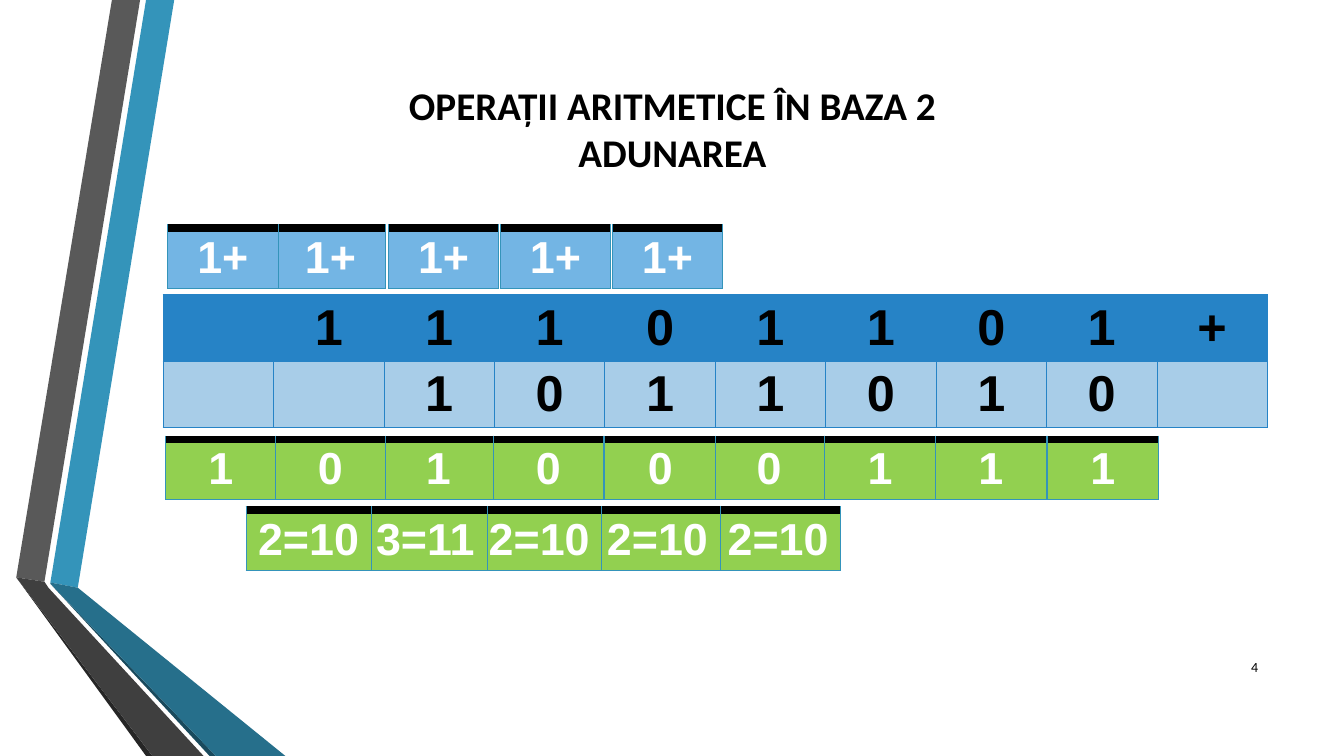
from dataclasses import dataclass

from lxml import etree
from pptx import Presentation
from pptx.dml.color import RGBColor
from pptx.enum.text import MSO_ANCHOR, MSO_AUTO_SIZE, PP_ALIGN
from pptx.oxml.ns import qn
from pptx.slide import Slide
from pptx.table import _Cell
from pptx.text.text import TextFrame
from pptx.util import Cm, Pt

CENTER, RIGHT = PP_ALIGN.CENTER, PP_ALIGN.RIGHT
MIDDLE = MSO_ANCHOR.MIDDLE
NO_AUTOFIT = MSO_AUTO_SIZE.NONE
TITLE_ONLY = 5

BLACK = RGBColor(0x00, 0x00, 0x00)
WHITE = RGBColor(0xFF, 0xFF, 0xFF)
BLUE = RGBColor(0x26, 0x83, 0xC6)
PALE_BLUE = RGBColor(0xA8, 0xCD, 0xE8)
SKY_BLUE = RGBColor(0x73, 0xB5, 0xE4)
GREEN = RGBColor(0x92, 0xD0, 0x50)
TEAL = RGBColor(0x34, 0x94, 0xBA)
DARK_TEAL = RGBColor(0x26, 0x6F, 0x8B)
DEEP_TEAL = RGBColor(0x19, 0x4A, 0x5D)
GRAY = RGBColor(0x59, 0x59, 0x59)
DARK_GRAY = RGBColor(0x3F, 0x3F, 0x3F)
DEEP_GRAY = RGBColor(0x26, 0x26, 0x26)

ROW_HEIGHT = 1.03


@dataclass(frozen=True)
class Ribbon:
    color: RGBColor
    points: list[tuple[float, float]]


@dataclass(frozen=True)
class CellStyle:
    fill: RGBColor
    text: RGBColor
    size: float
    side: RGBColor
    top: RGBColor
    top_width: float


@dataclass(frozen=True)
class Band:
    """A row of single-cell tables; lengths in centimetres."""
    top: float
    width: float
    fill: RGBColor


@dataclass(frozen=True)
class Digit:
    band: Band
    label: str
    left: float


RIBBONS = [
    Ribbon(TEAL, [(1.27, 14.68), (1.96, 14.81), (4.39, 0), (3.68, 0)]),
    Ribbon(GRAY, [(3.53, 0), (2.82, 0), (0.41, 14.55), (1.12, 14.66)]),
    Ribbon(DEEP_GRAY, [(0.41, 14.55), (3.68, 19.05), (3.84, 19.05)]),
    Ribbon(DEEP_TEAL, [(1.27, 14.71), (5.28, 19.05), (5.44, 19.05)]),
    Ribbon(DARK_TEAL, [(1.27, 14.68), (1.27, 14.71), (5.44, 19.05),
                       (7.19, 19.05), (1.96, 14.81)]),
    Ribbon(DARK_GRAY, [(5.13, 19.05), (1.22, 14.81), (1.12, 14.66),
                       (0.41, 14.55), (3.84, 19.05)]),
]

ADDENDS = [
    ["", "1", "1", "1", "0", "1", "1", "0", "1", "+"],
    ["", "", "1", "0", "1", "1", "0", "1", "0", ""],
]
ADDEND_STYLES = [CellStyle(fill, BLACK, 36, BLUE, BLUE, 0.75)
                 for fill in (BLUE, PALE_BLUE)]

CARRY = Band(5.74, 2.79, SKY_BLUE)
RESULT = Band(11.07, 2.79, GREEN)
COLUMN_SUM = Band(12.85, 3.15, GREEN)

# Neighbours overlap, so the order here is the stacking order.
DIGITS = [
    Digit(RESULT, "1", 26.39),
    Digit(RESULT, "1", 23.57),
    Digit(RESULT, "1", 20.78),
    Digit(RESULT, "0", 17.98),
    Digit(COLUMN_SUM, "2=10", 18.03),
    Digit(CARRY, "1+", 15.42),
    Digit(RESULT, "0", 15.24),
    Digit(CARRY, "1+", 12.6),
    Digit(RESULT, "0", 12.42),
    Digit(CARRY, "1+", 9.78),
    Digit(RESULT, "1", 9.65),
    Digit(RESULT, "1", 4.17),
    Digit(RESULT, "0", 6.93),
    Digit(CARRY, "1+", 6.93),
    Digit(COLUMN_SUM, "2=10", 14.99),
    Digit(COLUMN_SUM, "2=10", 12.01),
    Digit(COLUMN_SUM, "3=11", 9.14),
    Digit(COLUMN_SUM, "2=10", 6.2),
    Digit(CARRY, "1+", 4.22),
]


def add_ribbon(slide: Slide, ribbon: Ribbon) -> None:
    start, *rest = [(Cm(x), Cm(y)) for x, y in ribbon.points]
    outline = slide.shapes.build_freeform(*start)
    outline.add_line_segments(rest, close=True)
    shape = outline.convert_to_shape()
    shape.shadow.inherit = False
    shape.fill.solid()
    shape.fill.fore_color.rgb = ribbon.color
    shape.line.fill.background()


def set_text(frame: TextFrame, text: str, size: float, align: PP_ALIGN,
             bold: bool) -> None:
    frame.word_wrap = True
    frame.auto_size = NO_AUTOFIT
    frame.vertical_anchor = MIDDLE
    frame.text = text
    line = frame.paragraphs[0]
    line.alignment = align
    line.font.name = "Calibri"
    line.font.size = Pt(size)
    line.font.bold = bold
    line.font.color.rgb = BLACK


def set_borders(cell: _Cell, style: CellStyle) -> None:
    properties = cell._tc.get_or_add_tcPr()
    for position, edge in enumerate(("lnL", "lnR", "lnT", "lnB")):
        on_top = edge == "lnT"
        width = style.top_width if on_top else 0.75
        border = etree.Element(qn(f"a:{edge}"), w=str(Pt(width)))
        fill = etree.SubElement(border, qn("a:solidFill"))
        etree.SubElement(fill, qn("a:srgbClr"),
                         val=str(style.top if on_top else style.side))
        properties.insert(position, border)


def add_digit_table(slide: Slide, rows: list[list[str]],
                    styles: list[CellStyle], left: float, top: float,
                    width: float) -> None:
    table = slide.shapes.add_table(
        len(rows), len(rows[0]), Cm(left), Cm(top), Cm(width),
        Cm(ROW_HEIGHT * len(rows))).table
    table.first_row = table.horz_banding = False
    for r, (labels, style) in enumerate(zip(rows, styles)):
        for c, label in enumerate(labels):
            cell = table.cell(r, c)
            cell.text = label
            cell.fill.solid()
            cell.fill.fore_color.rgb = style.fill
            set_borders(cell, style)
            digit = cell.text_frame.paragraphs[0]
            digit.alignment = CENTER
            digit.font.name = "Arial"
            digit.font.size = Pt(style.size)
            digit.font.bold = True
            digit.font.color.rgb = style.text


def main() -> None:
    deck = Presentation()
    deck.slide_width, deck.slide_height = Cm(33.86), Cm(19.05)
    slide = deck.slides.add_slide(deck.slide_layouts[TITLE_ONLY])

    for ribbon in RIBBONS:
        add_ribbon(slide, ribbon)

    title = slide.shapes.title
    title.left, title.top = Cm(2.34), Cm(1.4)
    title.width, title.height = Cm(29.2), Cm(3.68)
    set_text(title.text_frame, "OPERAȚII ARITMETICE ÎN BAZA 2\vADUNAREA",
             28, CENTER, True)

    page_number = slide.shapes.add_textbox(Cm(30.43), Cm(16.3),
                                           Cm(1.52), Cm(1.02))
    set_text(page_number.text_frame, "4", 10, RIGHT, False)

    add_digit_table(slide, ADDENDS, ADDEND_STYLES, 4.11, 7.42, 27.82)
    for digit in DIGITS:
        band = digit.band
        style = CellStyle(band.fill, WHITE, 32, TEAL, BLACK, 6)
        add_digit_table(slide, [[digit.label]], [style],
                        digit.left, band.top, band.width)

    deck.save("out.pptx")


if __name__ == "__main__":
    main()
